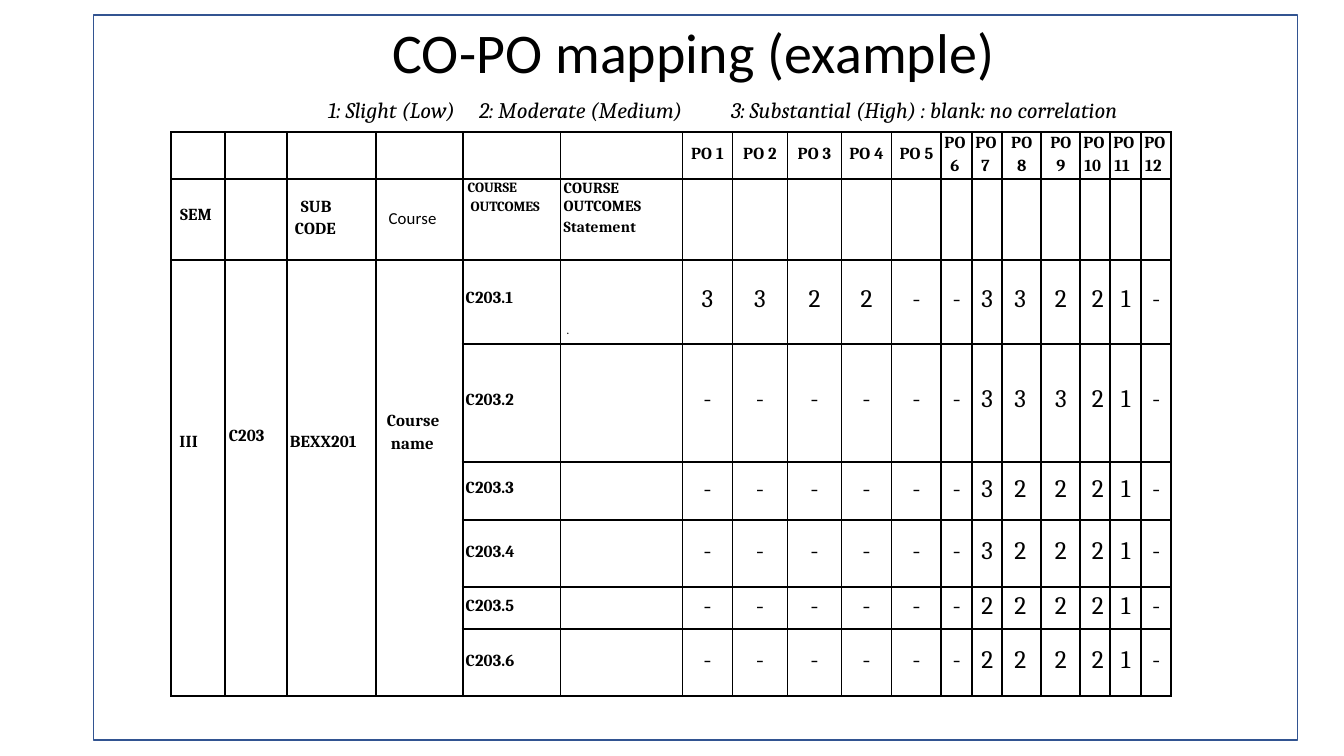
from dataclasses import dataclass

from lxml import etree
from pptx import Presentation
from pptx.dml.color import RGBColor
from pptx.enum import shapes, text
from pptx.oxml import ns
from pptx.util import Pt


@dataclass(frozen=True)
class Theme:
    ink: str = "000000"
    frame: str = "325491"
    title_font: str = "Calibri"
    body_font: str = "Cambria"
    title: float = 40
    legend: float = 15.9
    mark: float = 18
    label: float = 12
    statement: float = 11
    outcome: float = 10
    dot: float = 9
    rule: float = 1.5


THEME = Theme()
LEFT, CENTER, RIGHT = text.PP_ALIGN.LEFT, text.PP_ALIGN.CENTER, text.PP_ALIGN.RIGHT

COLUMN_WIDTHS = [38.2, 44.3, 63.5, 62.1, 70, 87.1, 35.7, 39.3, 38.6, 35.7, 35.7,
                 22.1, 21.4, 27.9, 27.9, 21.4, 22.1, 21.4]
ROW_HEIGHTS = [33.5, 57.9, 60, 84.2, 41.4, 47.9, 30, 47.9]
FIRST_PO = 6      # column of PO 1
FIRST_CO = 2      # row of the first course outcome
LEVELS = ["3322--33221-", "------33321-", "------32221-",
          "------32221-", "------22221-", "------22221-"]
LABEL_TOPS = [20, 33.5, 12, 16, 7, 16]
MARK_TOPS = [18, 29, 9.4, 12.2, 3.6, 12.2]


def style(paragraph, size, font=THEME.body_font, bold=False, italic=False,
          align=LEFT, left=0, first=0, before=0, spacing=None, tracking=0):
    """Format a paragraph that already holds its text."""
    paragraph.alignment = align
    paragraph.space_before = Pt(before)
    if spacing:
        paragraph.line_spacing = spacing
    properties = paragraph._p.get_or_add_pPr()
    properties.set("marL", str(Pt(left)))
    properties.set("indent", str(Pt(first)))
    for run in paragraph.runs:
        run.font.size = Pt(size)
        run.font.name = font
        run.font.bold = bold
        run.font.italic = italic
        run.font.color.rgb = RGBColor.from_string(THEME.ink)
        if tracking:
            run._r.get_or_add_rPr().set("spc", str(round(tracking * 100)))


def fill_cell(cell, lines, top=0, right=0):
    """Write (text, format) lines into a cell, starting at the given depth."""
    cell.margin_top, cell.margin_right = Pt(top), Pt(right)
    cell.text_frame.text = "\n".join(line for line, _ in lines)
    for paragraph, (_, look) in zip(cell.text_frame.paragraphs, lines):
        style(paragraph, **look)


def label(**changes):
    return {"size": THEME.label, "bold": True, "tracking": 0.1, **changes}


def rule_cell(cell):
    cell.fill.background()
    properties = cell._tc.get_or_add_tcPr()
    for position, side in enumerate(("a:lnL", "a:lnR", "a:lnT", "a:lnB")):
        line = etree.Element(ns.qn(side), w=str(Pt(THEME.rule)))
        fill = etree.SubElement(line, ns.qn("a:solidFill"))
        etree.SubElement(fill, ns.qn("a:srgbClr"), val=THEME.ink)
        properties.insert(position, line)


def text_box(slide, box, line, anchor, **look):
    holder = slide.shapes.add_textbox(*map(Pt, box))
    frame = holder.text_frame
    frame.margin_left = frame.margin_right = frame.margin_bottom = 0
    frame.margin_top = Pt(1)
    frame.word_wrap = True
    frame.vertical_anchor = anchor
    frame.text = line
    style(frame.paragraphs[0], **look)
    return frame.paragraphs[0]


def add_title(slide, box):
    text_box(slide, box, "CO-PO mapping (example)", text.MSO_ANCHOR.MIDDLE,
             size=THEME.title, font=THEME.title_font, left=0.9, tracking=0.1)


def add_legend(slide, box):
    legend = text_box(
        slide, box,
        "1: Slight (Low)\t2: Moderate (Medium)\t"
        "3: Substantial (High) : blank: no correlation",
        text.MSO_ANCHOR.TOP, size=THEME.legend, italic=True, left=0.9)
    stops = etree.SubElement(legend._p.get_or_add_pPr(), ns.qn("a:tabLst"))
    for stop in (109.4, 272.9):
        etree.SubElement(stops, ns.qn("a:tab"), pos=str(Pt(stop)), algn="l")


def fill_headings(table):
    # PO numbers: the wide columns hold one line, the narrow ones two
    for number in range(1, 13):
        cell = table.cell(0, FIRST_PO + number - 1)
        if number <= 5:
            fill_cell(cell, [(f"PO {number}", label(align=CENTER))], top=8.6)
            continue
        if number in (8, 9):
            name = digit = {"align": CENTER}
        else:
            name, digit = {"left": 2.2}, {"left": 6.5 if number < 10 else 2.9}
        fill_cell(cell, [("PO", label(**name)),
                         (str(number), label(before=2.6, **digit))], top=0.7)

    # Course headings
    outcome = label(size=THEME.outcome, tracking=0)
    statement = label(size=THEME.statement, left=2.2)
    fill_cell(table.cell(1, 0), [("SEM", label(left=6.2))], top=19)
    fill_cell(table.cell(1, 2),
              [("SUB CODE", label(left=5.8, first=4.3, spacing=1.17))], top=10.8)
    fill_cell(table.cell(1, 3),
              [("Course", label(font=THEME.title_font, bold=False, left=9.2))], top=21)
    fill_cell(table.cell(1, 4),
              [("COURSE", {**outcome, "left": 3.6}),
               ("OUTCOMES", {**outcome, "left": 13.7, "first": -7.9, "spacing": 1.16})],
              top=0.7)
    fill_cell(table.cell(1, 5),
              [("COURSE OUTCOMES", statement),
               ("Statement", {**statement, "before": 2.2})], top=0.7)


def fill_course(table):
    course = [("III", 123, label(left=5.8)),
              ("C203", 119, label(left=2.9)),
              ("BEXX201", 123, label(left=2.2)),
              ("Course name", 106, label(left=10.8, first=-2.9, spacing=1.17))]
    for column, (line, top, look) in enumerate(course):
        cell = table.cell(FIRST_CO, column)
        cell.merge(table.cell(len(ROW_HEIGHTS) - 1, column))
        fill_cell(cell, [(line, look)], top)


def fill_outcomes(table):
    fill_cell(table.cell(FIRST_CO, 5), [(".", {"size": THEME.dot, "left": 4.3})], top=45)
    placing = {8: {"left": 8.6}, 10: {"align": RIGHT}}
    for index, levels in enumerate(LEVELS):
        row = FIRST_CO + index
        fill_cell(table.cell(row, 4), [(f"C203.{index + 1}", label(left=2.2))],
                  LABEL_TOPS[index])
        for number, level in enumerate(levels, 1):
            look = {"size": THEME.mark, **placing.get(number, {"align": CENTER})}
            fill_cell(table.cell(row, FIRST_PO + number - 1), [(level, look)],
                      MARK_TOPS[index], right=4.7 if number == 10 else 0)


def add_mapping(slide, left, top):
    size = (sum(COLUMN_WIDTHS), sum(ROW_HEIGHTS))
    table = slide.shapes.add_table(len(ROW_HEIGHTS), len(COLUMN_WIDTHS),
                                   *map(Pt, (left, top, *size))).table
    table.first_row = table.horz_banding = False
    for column, width in zip(table.columns, COLUMN_WIDTHS):
        column.width = Pt(width)
    for row, height in zip(table.rows, ROW_HEIGHTS):
        row.height = Pt(height)
    for cell in table.iter_cells():
        cell.margin_left = cell.margin_right = cell.margin_top = cell.margin_bottom = 0
        rule_cell(cell)
    fill_headings(table)
    fill_course(table)
    fill_outcomes(table)


def add_frame(slide, box):
    frame = slide.shapes.add_shape(shapes.MSO_SHAPE.RECTANGLE, *map(Pt, box))
    frame.shadow.inherit = False
    frame.fill.background()
    frame.line.color.rgb = RGBColor.from_string(THEME.frame)
    frame.line.width = Pt(1)


def main():
    deck = Presentation()
    deck.slide_width, deck.slide_height = Pt(960), Pt(540)
    slide = deck.slides.add_slide(deck.slide_layouts[6])
    add_title(slide, (279.4, 10.8, 488.2, 49.7))
    add_mapping(slide, 122.4, 94.3)
    add_legend(slide, (233.3, 67.7, 614.2, 20.2))
    add_frame(slide, (67, 10.8, 859.7, 517.7))
    deck.save("out.pptx")


if __name__ == "__main__":
    main()
